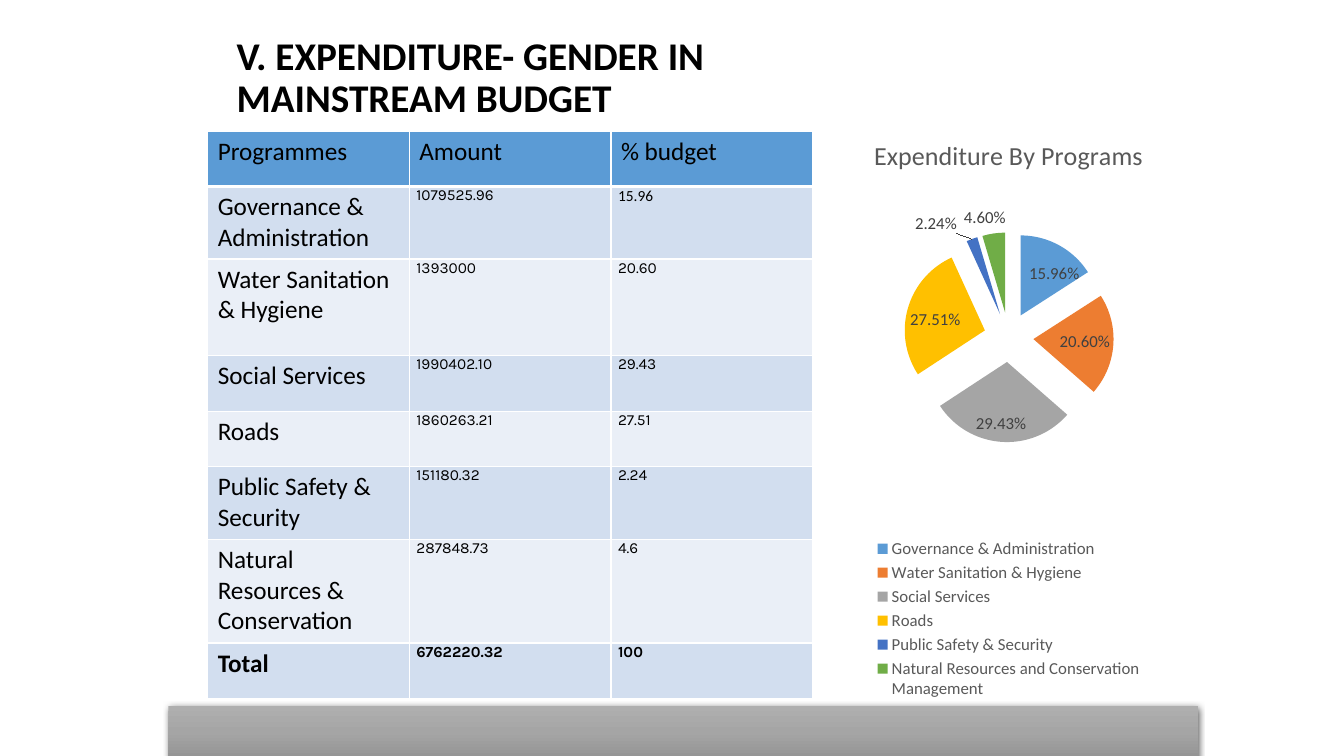
import lxml.etree
import pptx
import pptx.chart.data
import pptx.dml.color
import pptx.enum.chart
import pptx.enum.shapes
import pptx.enum.text
import pptx.oxml
import pptx.oxml.ns
import pptx.util
from pptx.util import Inches

TITLE = "V. EXPENDITURE- GENDER IN MAINSTREAM BUDGET"
HEADINGS = ("Programmes", "Amount", "% budget")
PROGRAMMES = [
    ("Governance & Administration", "1079525.96", "15.96"),
    ("Water Sanitation & Hygiene", "1393000", "20.60"),
    ("Social Services", "1990402.10", "29.43"),
    ("Roads", "1860263.21", "27.51"),
    ("Public Safety & Security", "151180.32", "2.24"),
    ("Natural Resources & Conservation", "287848.73", "4.6"),
]
TOTAL = ("Total", "6762220.32", "100")
ROW_HEIGHTS = (0.55, 0.72, 0.96, 0.55, 0.55, 0.72, 1.03, 0.55)
COLUMN_WIDTH = 2
CHART_TITLE = "Expenditure By Programs"
LAST_SLICE = "Natural Resources and Conservation Management"
PLOT_AREA = {"x": 0, "y": 0.2, "w": 1, "h": 0.357}
EXPLOSION = 31

THEME = {
    "font": "Calibri", "figure_font": "Karla",
    "title": 28, "cell": 18, "figure": 11,
    "chart_title": 18.6, "chart_text": 12,
    "black": "000000", "white": "FFFFFF",
    "header": "5B9BD5", "bands": ("D2DEEF", "EAEFF7"),
    "muted": "595959", "label": "404040",
    "slices": ("5B9BD5", "ED7D31", "A5A5A5", "FFC000", "4472C4", "70AD47"),
    "footer": ((0, "AFAFAF"), (50, "A5A5A5"), (100, "939393")),
}
DRAWING = pptx.oxml.ns.nsdecls("a")


def style(font, size, color, bold=False, name=THEME["font"]):
    font.name = name
    font.size = pptx.util.Pt(size)
    font.bold = bold
    font.color.rgb = pptx.dml.color.RGBColor.from_string(color)


def write(frame, text, size, bold=False, name=THEME["font"]):
    para = frame.paragraphs[0]
    span = para.add_run()
    span.text = text
    style(span.font, size, THEME["black"], bold, name)
    return para


def paint(fill, color):
    fill.solid()
    fill.fore_color.rgb = pptx.dml.color.RGBColor.from_string(color)


def border(cell, bottom_width):
    properties = cell._tc.get_or_add_tcPr()
    for side, width in (("L", 1), ("R", 1), ("T", 1), ("B", bottom_width)):
        properties.append(pptx.oxml.parse_xml(
            f'<a:ln{side} {DRAWING} w="{pptx.util.Pt(width)}"><a:solidFill>'
            f'<a:srgbClr val="{THEME["white"]}"/></a:solidFill></a:ln{side}>'))


def add_title(page):
    box = page.shapes.add_textbox(Inches(2.25), Inches(0.06), Inches(6.94), Inches(1.44))
    frame = box.text_frame
    frame.word_wrap = True
    frame.vertical_anchor = pptx.enum.text.MSO_ANCHOR.MIDDLE
    write(frame, TITLE, THEME["title"], True).line_spacing = 0.9


def add_budget_table(page):
    rows = [HEADINGS, *PROGRAMMES, TOTAL]
    table = page.shapes.add_table(
        len(rows), len(HEADINGS), Inches(2.06), Inches(1.3),
        Inches(COLUMN_WIDTH * len(HEADINGS)), Inches(sum(ROW_HEIGHTS))).table
    for column in table.columns:
        column.width = Inches(COLUMN_WIDTH)
    for r, (values, height) in enumerate(zip(rows, ROW_HEIGHTS)):
        table.rows[r].height = Inches(height)
        for c, value in enumerate(values):
            cell = table.cell(r, c)
            heading = r == 0
            border(cell, 3 if heading else 1)
            paint(cell.fill, THEME["header"] if heading else THEME["bands"][(r - 1) % 2])
            size, name = THEME["cell"], THEME["font"]
            if c and not heading:
                cell.margin_left = cell.margin_right = Inches(0.07)
                cell.margin_top = cell.margin_bottom = 0
                size = THEME["figure"]
                if (r, c) != (1, 2):
                    name = THEME["figure_font"]
            write(cell.text_frame, value, size, values == TOTAL, name)


def add_pie(page):
    data = pptx.chart.data.CategoryChartData(number_format="0.00%")
    data.categories = [row[0] for row in PROGRAMMES[:-1]] + [LAST_SLICE]
    data.add_series(CHART_TITLE, [round(float(row[2]) / 100, 4) for row in PROGRAMMES])
    chart = page.shapes.add_chart(
        pptx.enum.chart.XL_CHART_TYPE.PIE, Inches(8.25), Inches(1.14),
        Inches(3.51), Inches(5.83), data).chart
    style(chart.font, 10, THEME["black"])
    chart.has_title = True
    span = chart.chart_title.text_frame.paragraphs[0].add_run()
    span.text = CHART_TITLE
    style(span.font, THEME["chart_title"], THEME["muted"])
    chart.has_legend = True
    chart.legend.position = pptx.enum.chart.XL_LEGEND_POSITION.BOTTOM
    chart.legend.include_in_layout = False
    style(chart.legend.font, THEME["chart_text"], THEME["muted"])

    plot = chart.plots[0]
    plot.vary_by_categories = True
    series = plot.series[0]
    for index, color in enumerate(THEME["slices"]):
        paint(series.points[index].format.fill, color)
    labels = series.data_labels
    labels.show_value = True
    labels.show_percentage = False
    labels.number_format = "0.00%"
    labels.number_format_is_linked = False
    labels.position = pptx.enum.chart.XL_LABEL_POSITION.BEST_FIT
    style(labels.font, THEME["chart_text"], THEME["label"])

    namespace = pptx.oxml.ns.nsdecls("c")
    qn = pptx.oxml.ns.qn
    explosion = pptx.oxml.parse_xml(f'<c:explosion {namespace} val="{EXPLOSION}"/>')
    series._element.find(qn("c:dPt")).addprevious(explosion)
    leaders = labels._element.find(qn("c:showLeaderLines"))
    if leaders is None:
        leaders = lxml.etree.SubElement(labels._element, qn("c:showLeaderLines"))
    leaders.set("val", "1")

    area = chart._chartSpace.find(".//" + qn("c:plotArea"))
    for old in area.findall(qn("c:layout")):
        area.remove(old)
    modes = "".join(f'<c:{axis}Mode val="edge"/>' for axis in "xy")
    sizes = "".join(f'<c:{key} val="{value}"/>' for key, value in PLOT_AREA.items())
    area.insert(0, pptx.oxml.parse_xml(
        f'<c:layout {namespace}><c:manualLayout><c:layoutTarget val="inner"/>'
        f'{modes}{sizes}</c:manualLayout></c:layout>'))


def add_footer(page):
    bar = page.shapes.add_shape(
        pptx.enum.shapes.MSO_SHAPE.RECTANGLE,
        Inches(1.67), Inches(7), Inches(10.21), Inches(0.53))
    bar.line.fill.background()
    bar.shadow.inherit = False
    stops = "".join(
        f'<a:gs pos="{place * 1000}"><a:srgbClr val="{color}"/></a:gs>'
        for place, color in THEME["footer"])
    properties = bar._element.spPr
    properties.find(pptx.oxml.ns.qn("a:prstGeom")).addnext(pptx.oxml.parse_xml(
        f'<a:gradFill {DRAWING} rotWithShape="1"><a:gsLst>{stops}</a:gsLst>'
        '<a:lin ang="5400000" scaled="0"/></a:gradFill>'))
    effects = properties.find(pptx.oxml.ns.qn("a:effectLst"))
    effects.append(pptx.oxml.parse_xml(
        f'<a:outerShdw {DRAWING} blurRad="{pptx.util.Pt(4.5)}" dist="{pptx.util.Pt(1.5)}" '
        f'dir="5400000" algn="ctr" rotWithShape="0"><a:srgbClr val="{THEME["black"]}">'
        '<a:alpha val="63000"/></a:srgbClr></a:outerShdw>'))


def main():
    deck = pptx.Presentation()
    deck.slide_width, deck.slide_height = Inches(13.33), Inches(7.5)
    page = deck.slides.add_slide(deck.slide_layouts[6])
    paint(page.background.fill, THEME["white"])
    add_title(page)
    add_budget_table(page)
    add_pie(page)
    add_footer(page)
    deck.save("out.pptx")


if __name__ == "__main__":
    main()
